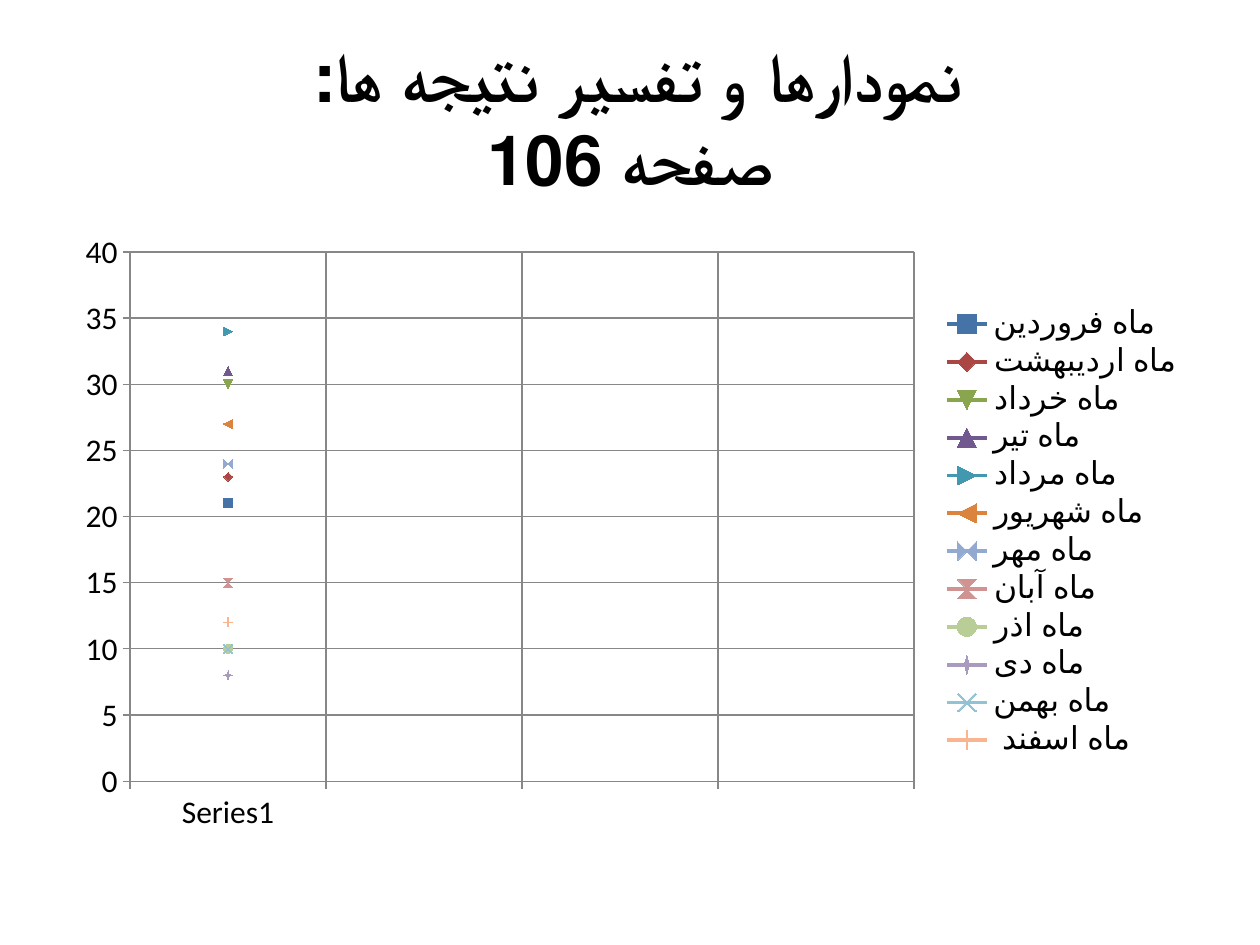
from pptx import Presentation
from pptx import util as u
from pptx.chart.data import CategoryChartData
from pptx.dml.color import RGBColor
from pptx.enum import chart as ch, text

PX = 9144
BLACK = RGBColor(0x00, 0x00, 0x00)
WHITE = RGBColor(0xFF, 0xFF, 0xFF)
GRAY = RGBColor(0x87, 0x87, 0x87)
BLUE = RGBColor(0x45, 0x72, 0xA7)
RED = RGBColor(0xAA, 0x46, 0x43)
GREEN = RGBColor(0x89, 0xA5, 0x4E)
PURPLE = RGBColor(0x71, 0x58, 0x8F)
TEAL = RGBColor(0x41, 0x98, 0xAF)
ORANGE = RGBColor(0xDB, 0x84, 0x3D)
LIGHT_BLUE = RGBColor(0x93, 0xA9, 0xCF)
LIGHT_RED = RGBColor(0xD1, 0x93, 0x92)
LIGHT_GREEN = RGBColor(0xB9, 0xCD, 0x96)
LIGHT_PURPLE = RGBColor(0xA9, 0x9B, 0xBD)
LIGHT_TEAL = RGBColor(0x91, 0xC3, 0xD5)
LIGHT_ORANGE = RGBColor(0xF9, 0xB5, 0x90)

CATEGORIES = ["Series1", "", "", ""]
MONTHS = [
    ("ماه فروردین", 21, BLUE),
    ("ماه اردیبهشت", 23, RED),
    ("ماه خرداد", 30, GREEN),
    ("ماه تیر", 31, PURPLE),
    ("ماه مرداد", 34, TEAL),
    ("ماه شهریور", 27, ORANGE),
    ("ماه مهر", 24, LIGHT_BLUE),
    ("ماه آبان", 15, LIGHT_RED),
    ("ماه اذر", 10, LIGHT_GREEN),
    ("ماه دی", 8, LIGHT_PURPLE),
    ("ماه بهمن", 10, LIGHT_TEAL),
    (" ماه اسفند", 12, LIGHT_ORANGE),
]


def px(*lengths):
    return [u.Emu(n * PX) for n in lengths]


class Deck:
    font = "Calibri"

    def __init__(self, width, height):
        self.prs = Presentation()
        self.prs.slide_width, self.prs.slide_height = px(width, height)
        self.s = self.prs.slides.add_slide(self.prs.slide_layouts[5])
        fill = self.s.background.fill
        fill.solid()
        fill.fore_color.rgb = WHITE

    def style(self, font, size, bold=False):
        font.name = self.font
        font.size = u.Pt(size)
        font.bold = bold
        font.color.rgb = BLACK

    def title(self, words, box, size):
        sp = self.s.shapes.title
        sp.left, sp.top, sp.width, sp.height = px(*box)
        tf = sp.text_frame
        tf.word_wrap = True
        tf.auto_size = text.MSO_AUTO_SIZE.NONE
        tf.vertical_anchor = text.MSO_ANCHOR.MIDDLE
        tf.text = words
        p = tf.paragraphs[0]
        p.alignment = text.PP_ALIGN.CENTER
        p._p.get_or_add_pPr().set("rtl", "1")
        self.style(p.font, size, bold=True)

    def line_chart(self, categories, rows, box, size):
        data = CategoryChartData()
        data.categories = categories
        for name, value, _ in rows:
            data.add_series(name, [value] + [None] * (len(categories) - 1))
        chart = self.s.shapes.add_chart(
            ch.XL_CHART_TYPE.LINE_MARKERS, *px(*box), data).chart
        self.style(chart.font, size)
        chart.has_title = False
        chart.has_legend = True
        chart.legend.position = ch.XL_LEGEND_POSITION.RIGHT
        chart.legend.include_in_layout = False
        chart.plots[0].vary_by_categories = False
        for axis in (chart.category_axis, chart.value_axis):
            axis.has_major_gridlines = True
            axis.major_tick_mark = ch.XL_TICK_MARK.CROSS
            for part in (axis, axis.major_gridlines):
                part.format.line.color.rgb = GRAY
                part.format.line.width = u.Pt(0.75)
        chart.value_axis.minimum_scale = 0
        chart.value_axis.maximum_scale = 40
        chart.value_axis.major_unit = 5
        for series, (_, _, color) in zip(chart.plots[0].series, rows):
            series.smooth = False
            series.format.line.color.rgb = color
            series.format.line.width = u.Pt(2.25)
            series.marker.format.fill.solid()
            series.marker.format.fill.fore_color.rgb = color
            series.marker.format.line.color.rgb = color

    def save(self):
        self.prs.save("out.pptx")


def main():
    deck = Deck(1000, 750)
    deck.title("نمودارها و تفسیر نتیجه ها: \vصفحه 106", (50, 30, 900, 125), 39.6)
    deck.line_chart(CATEGORIES, MONTHS, (50, 175, 900, 495), 18)
    deck.save()


if __name__ == "__main__":
    main()
